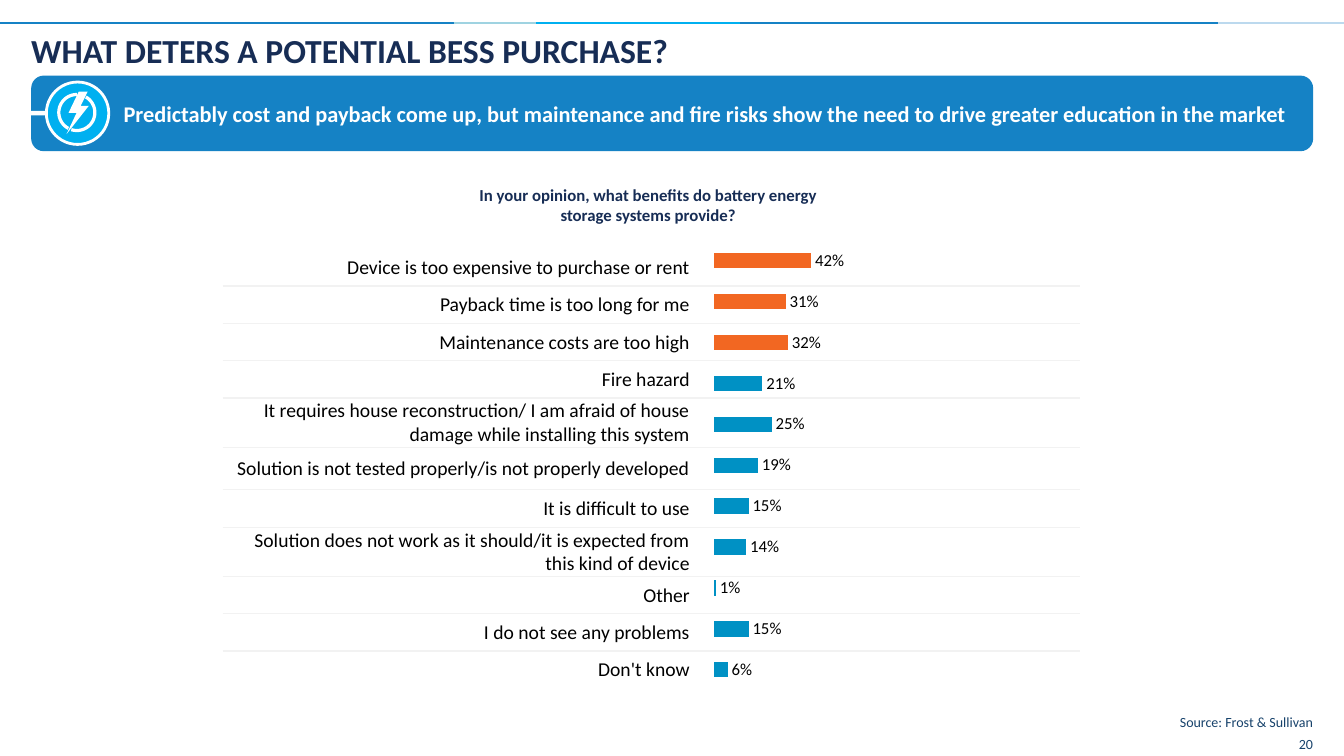
from math import cos, radians, sin

from lxml import etree
from pptx import Presentation
from pptx import util as u
from pptx.chart import data
from pptx.dml import color
from pptx.enum import chart as ch
from pptx.enum import shapes, text
from pptx.oxml import ns

SHAPE = shapes.MSO_SHAPE
MID = text.MSO_ANCHOR.MIDDLE
TOP = text.MSO_ANCHOR.TOP
LOW = text.MSO_ANCHOR.BOTTOM
LEFT = text.PP_ALIGN.LEFT
RIGHT = text.PP_ALIGN.RIGHT
CENTER = text.PP_ALIGN.CENTER
NAVY, BLUE, SKY, STEEL = "172D55", "1582C5", "00B0F0", "17426B"
WHITE, BLACK, GREY, TEAL, ORANGE = "FFFFFF", "000000", "F2F2F2", "0091C4", "F26722"


def hue(code):
    return color.RGBColor.from_string(code)


def put(thing, form):
    for key, val in form.items():
        setattr(thing, key, val)


def node(root, tag, **attrs):
    return etree.SubElement(root, ns.qn(tag), attrs)


class Slide:
    font = "Calibri"

    def __init__(self, deck):
        self.slide = deck.slides.add_slide(deck.slide_layouts[5])
        self.items = self.slide.shapes

    def style(self, font, size, code, bold=False):
        put(font, {"name": self.font, "size": u.Pt(size), "bold": bold})
        font.color.rgb = hue(code)

    def paint(self, shape, fill, line=None, width=1):
        shape.shadow.inherit = False
        shape.fill.solid()
        shape.fill.fore_color.rgb = hue(fill)
        if line:
            shape.line.color.rgb = hue(line)
            shape.line.width = u.Pt(width)
        else:
            shape.line.fill.background()

    def say(self, box, words, size, code, bold=False, align=LEFT, anchor=TOP, space=1.0):
        frame = box.text_frame
        put(frame, {"word_wrap": True, "vertical_anchor": anchor, "margin_left": 0,
                    "margin_right": 0, "margin_top": 0, "margin_bottom": 0,
                    "auto_size": text.MSO_AUTO_SIZE.NONE})
        par = frame.paragraphs[0]
        put(par, {"alignment": align, "line_spacing": space})
        run = par.add_run()
        run.text = words
        self.style(run.font, size, code, bold)

    def title(self, words, area, *form):
        box = self.items.title
        put(box, dict(zip(("left", "top", "width", "height"), map(u.Pt, area))))
        self.say(box, words, *form)

    def label(self, words, area, *form, **more):
        self.say(self.items.add_textbox(*map(u.Pt, area)), words, *form, **more)

    def shape(self, kind, area, *look):
        self.paint(self.items.add_shape(kind, *map(u.Pt, area)), *look)

    def rule(self, start, end, top, code):
        line = self.items.add_connector(
            shapes.MSO_CONNECTOR.STRAIGHT, *map(u.Pt, (start, top, end, top)))
        line.line.color.rgb = hue(code)
        line.line.width = u.Pt(1.5)
        node(line._element.spPr, "a:effectLst")

    def outline(self, points, fill):
        grid = [(x * 100, y * 100) for x, y in points]
        form = self.items.build_freeform(*grid[0], scale=127)
        form.add_line_segments(grid[1:], close=True)
        self.paint(form.convert_to_shape(), fill)

    def border(self, cell, sides):
        props = cell._tc.get_or_add_tcPr()
        for side in "LRTB":
            line = node(props, "a:ln" + side, w=str(u.Pt(1)))
            if side in sides:
                node(node(line, "a:solidFill"), "a:srgbClr", val=GREY)
            else:
                node(line, "a:noFill")

    def table(self, names, area, cols, rows):
        grid = self.items.add_table(len(names), len(cols), *map(u.Pt, area)).table
        put(grid, {"first_row": False, "horz_banding": False})
        for col, width in zip(grid.columns, cols):
            col.width = u.Pt(width)
        for at, (name, high) in enumerate(zip(names, rows)):
            grid.rows[at].height = u.Pt(high)
            for cell in grid.rows[at].cells:
                put(cell, {"margin_left": u.Pt(0.7), "margin_right": u.Pt(0.7),
                           "margin_top": u.Pt(0.7), "margin_bottom": 0,
                           "vertical_anchor": MID})
                self.border(cell, "T" * (at > 0) + "B" * (at < len(names) - 1))
                cell.fill.background()
            par = grid.cell(at, 0).text_frame.paragraphs[0]
            par.alignment = RIGHT
            run = par.add_run()
            run.text = name
            self.style(run.font, 14, BLACK)

    def bars(self, vals, area, top):
        feed = data.CategoryChartData(number_format="0%")
        feed.categories = [str(n + 1) for n in range(len(vals))]
        feed.add_series("Series 1", vals)
        chart = self.items.add_chart(
            ch.XL_CHART_TYPE.BAR_CLUSTERED, *map(u.Pt, area), feed).chart
        put(chart, {"has_title": False, "has_legend": False})
        self.style(chart.font, 18, BLACK)
        put(chart.category_axis, {"reverse_order": True, "visible": False})
        put(chart.value_axis, {"minimum_scale": 0, "maximum_scale": 1.1,
                               "has_major_gridlines": False, "visible": False})
        plot = chart.plots[0]
        put(plot, {"gap_width": 170, "vary_by_categories": False, "has_data_labels": True})
        put(plot.data_labels, {"show_value": True, "number_format": "0%",
                               "number_format_is_linked": False,
                               "position": ch.XL_LABEL_POSITION.OUTSIDE_END})
        self.style(plot.data_labels.font, 12, BLACK)
        series = plot.series[0]
        series.invert_if_negative = False
        for part, code in [(series, TEAL)] + [(series.points[n], ORANGE) for n in range(top)]:
            part.format.fill.solid()
            part.format.fill.fore_color.rgb = hue(code)
        field = chart._chartSpace.chart.plotArea
        for old in field.findall(ns.qn("c:layout")):
            field.remove(old)
        frame = etree.Element(ns.qn("c:layout"))
        field.insert(0, frame)
        inner = node(frame, "c:manualLayout")
        for tag, val in (("layoutTarget", "inner"), ("xMode", "edge"), ("yMode", "edge"),
                         ("x", "0"), ("y", "0"), ("w", "0.99"), ("h", "1")):
            node(inner, "c:" + tag, val=val)


def arc(start, end, size):
    turns = [start + (end - start) * n / 40 for n in range(41)]
    return [(54.9 + size * cos(radians(t)), 80.4 - size * sin(radians(t))) for t in turns]


def main():
    deck = Presentation()
    put(deck, {"slide_width": u.Pt(960), "slide_height": u.Pt(540)})
    page = Slide(deck)

    for start, end, code in ((865, 960, "BCD9EE"), (511, 870, BLUE), (0, 326, BLUE),
                             (376.5, 528.5, SKY), (324, 383, "9FD3E1")):
        page.rule(start, end, 16.6, code)
    page.label("20", (916.6, 525.6, 21.2, 12.2), 10, STEEL, align=RIGHT, anchor=MID)
    page.title("WHAT DETERS A POTENTIAL BESS PURCHASE?", (22.3, 21.6, 915, 28.8), 24, NAVY, True)

    page.shape(SHAPE.ROUNDED_RECTANGLE, (22.3, 54, 915.7, 54), BLUE)
    page.label("Predictably cost and payback come up, but maintenance and fire risks show "
               "the need to drive greater education in the market",
               (88.3, 73.4, 839, 17.3), 16, WHITE, True, anchor=MID, space=0.9)
    page.shape(SHAPE.RECTANGLE, (22.3, 79.2, 10.8, 3.2), WHITE)
    page.shape(SHAPE.OVAL, (33.1, 58.6, 44.6, 44.6), SKY, WHITE, 2)
    for start, end in ((90, 242), (60, -108)):
        page.outline(arc(start, end, 14) + arc(end, start, 11.7), WHITE)
    page.outline([(56.2, 65.5), (62.6, 65.5), (57.6, 75.6), (63.4, 75.6),
                  (47.5, 95.8), (54.7, 80.6), (49, 80.6)], WHITE)

    page.label("Source: Frost & Sullivan", (841, 509.8, 96.8, 12.2), 10, STEEL,
               align=RIGHT, anchor=LOW)
    page.label("In your opinion, what benefits do battery energy storage systems provide?",
               (326.9, 131.8, 272.2, 28.8), 12, NAVY, True, align=CENTER)

    answers = [
        ("Device is too expensive to purchase or rent", 0.42, 26.7),
        ("Payback time is too long for me", 0.31, 26.7),
        ("Maintenance costs are too high", 0.32, 26.7),
        ("Fire hazard", 0.21, 26.7),
        ("It requires house reconstruction/ I am afraid of house damage while "
         "installing this system", 0.25, 35.2),
        ("Solution is not tested properly/is not properly developed", 0.19, 30.4),
        ("It is difficult to use", 0.15, 26.7),
        ("Solution does not work as it should/it is expected from this kind of device",
         0.14, 35.2),
        ("Other", 0.01, 26.7),
        ("I do not see any problems", 0.15, 26.7),
        ("Don't know", 0.06, 26.7),
    ]
    names, vals, rows = zip(*answers)
    page.table(names, (159.1, 177.6, 612.4, sum(rows)), (334.3, 278.1), rows)
    page.bars(vals, (509.8, 171.4, 184.3, 321.8), 3)
    deck.save("out.pptx")


if __name__ == "__main__":
    main()
